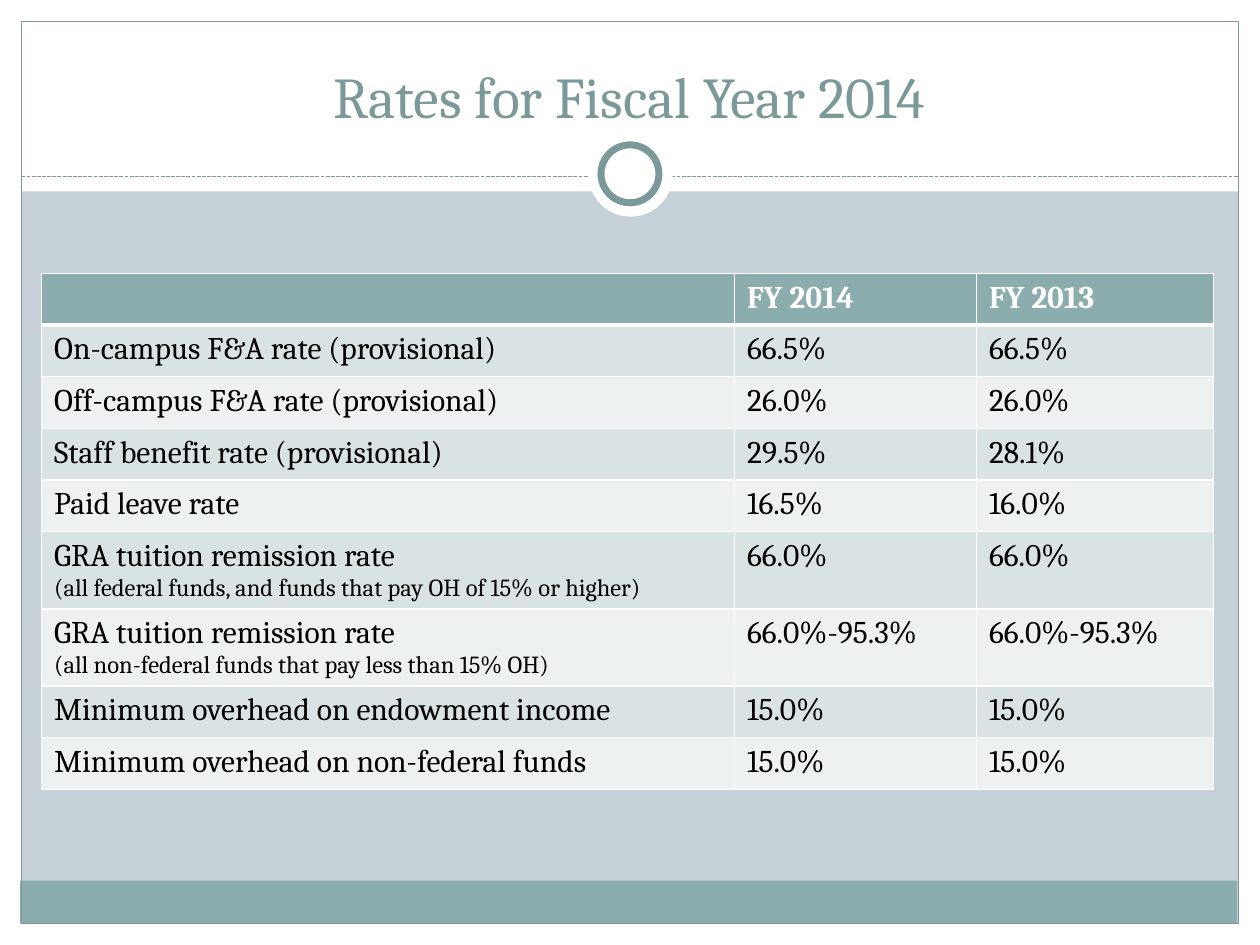
from lxml.etree import SubElement as Sub
from pptx import Presentation
from pptx.dml.color import RGBColor
from pptx.enum.dml import MSO_LINE
from pptx.enum.shapes import MSO_CONNECTOR, MSO_SHAPE
from pptx.enum.text import MSO_ANCHOR, PP_ALIGN
from pptx.oxml.ns import qn
from pptx.util import Inches, Pt

WHITE, TEAL, GRAY = "FFFFFF", "8CADAE", "7C999A"
BANDS = ["EEF1F2", "DAE3E3"]
color = RGBColor.from_string


def write(para, text, size=18, hue="000000", bold=False):
    """Add a run to the paragraph."""
    run = para.add_run()
    run.text = text
    font = run.font
    font.name, font.size, font.bold = "Cambria", Pt(size), bold
    font.color.rgb = color(hue)


deck = Presentation()
deck.slide_width, deck.slide_height = Inches(10), Inches(7.5)
slide = deck.slides.add_slide(deck.slide_layouts[5])
slide.background.fill.solid()
slide.background.fill.fore_color.rgb = color("C5D1D7")
shapes = slide.shapes

# Frame: white margins, footer band, outline, then the ring on the dashed rule
RECT, OVAL = MSO_SHAPE.RECTANGLE, MSO_SHAPE.OVAL
parts = [
    (RECT, (0, 7.33, 10, 0.17), WHITE, 0),
    (RECT, (0, 0, 10, 1.52), WHITE, 0),
    (RECT, (0, 0, 0.17, 7.5), WHITE, 0),
    (RECT, (9.83, 0, 0.17, 7.5), WHITE, 0),
    (RECT, (0.16, 6.99, 9.66, 0.34), TEAL, 0),
    (RECT, (0.17, 0.17, 9.66, 7.16), None, 0.75),
    (None, (0.17, 1.4, 9.83, 1.4), None, 0.75),
    (OVAL, (4.67, 1.05, 0.67, 0.67), WHITE, 0),
    (OVAL, (4.77, 1.15, 0.46, 0.46), WHITE, 4),
]
for kind, box, fill, width in parts:
    box = [Inches(n) for n in box]
    if kind is None:
        part = shapes.add_connector(MSO_CONNECTOR.STRAIGHT, *box)
        part.line.dash_style = MSO_LINE.SQUARE_DOT
        Sub(part._element.spPr, qn("a:effectLst"))
    else:
        part = shapes.add_shape(kind, *box)
        part.shadow.inherit = False
        if fill:
            part.fill.solid()
            part.fill.fore_color.rgb = color(fill)
        else:
            part.fill.background()
    if width:
        part.line.color.rgb = color(GRAY)
        part.line.width = Pt(width)
    else:
        part.line.fill.background()

title = shapes.title
title.left, title.top = Inches(0.33), Inches(0.25)
title.width, title.height = Inches(9.33), Inches(0.83)
frame = title.text_frame
frame.vertical_anchor = MSO_ANCHOR.BOTTOM
frame.paragraphs[0].alignment = PP_ALIGN.CENTER
write(frame.paragraphs[0], "Rates for Fiscal Year 2014", size=33, hue=GRAY)
shapes._spTree.append(title._element)  # bring in front of the frame

rates = [
    ("", "FY 2014", "FY 2013"),
    ("On-campus F&A rate (provisional)", "66.5%", "66.5%"),
    ("Off-campus F&A rate (provisional)", "26.0%", "26.0%"),
    ("Staff benefit rate (provisional)", "29.5%", "28.1%"),
    ("Paid leave rate", "16.5%", "16.0%"),
    ("GRA tuition remission rate\n(all federal funds, and funds that pay OH of 15% or higher)",
     "66.0%", "66.0%"),
    ("GRA tuition remission rate\n(all non-federal funds that pay less than 15% OH)",
     "66.0%-95.3%", "66.0%-95.3%"),
    ("Minimum overhead on endowment income", "15.0%", "15.0%"),
    ("Minimum overhead on non-federal funds", "15.0%", "15.0%"),
]
table = shapes.add_table(len(rates), 3, Inches(0.33), Inches(2.17),
                         Inches(9.3), Inches(4.11)).table
for col, width in zip(table.columns, (5.5, 1.92, 1.88)):
    col.width = Inches(width)

for r, row in enumerate(rates):
    head = r == 0
    table.rows[r].height = Inches(0.61 if "\n" in row[0] else 0.41)
    for c, text in enumerate(row):
        cell = table.cell(r, c)
        para = cell.text_frame.paragraphs[0]
        para.font.size = Pt(18)
        main, _, note = text.partition("\n")
        if main:
            write(para, main, hue=WHITE if head else "000000", bold=head)
        if note:
            para.add_line_break()
            write(para, note, size=14)
        props = cell._tc.get_or_add_tcPr()
        for side in "LRTB":
            thick = (head and side == "B") or (r == 1 and side == "T")
            edge = Sub(props, qn(f"a:ln{side}"), w=str(Pt(3 if thick else 1)))
            Sub(Sub(edge, qn("a:solidFill")), qn("a:srgbClr"), val=WHITE)
        cell.fill.solid()
        cell.fill.fore_color.rgb = color(TEAL if head else BANDS[r % 2])

deck.save("out.pptx")
